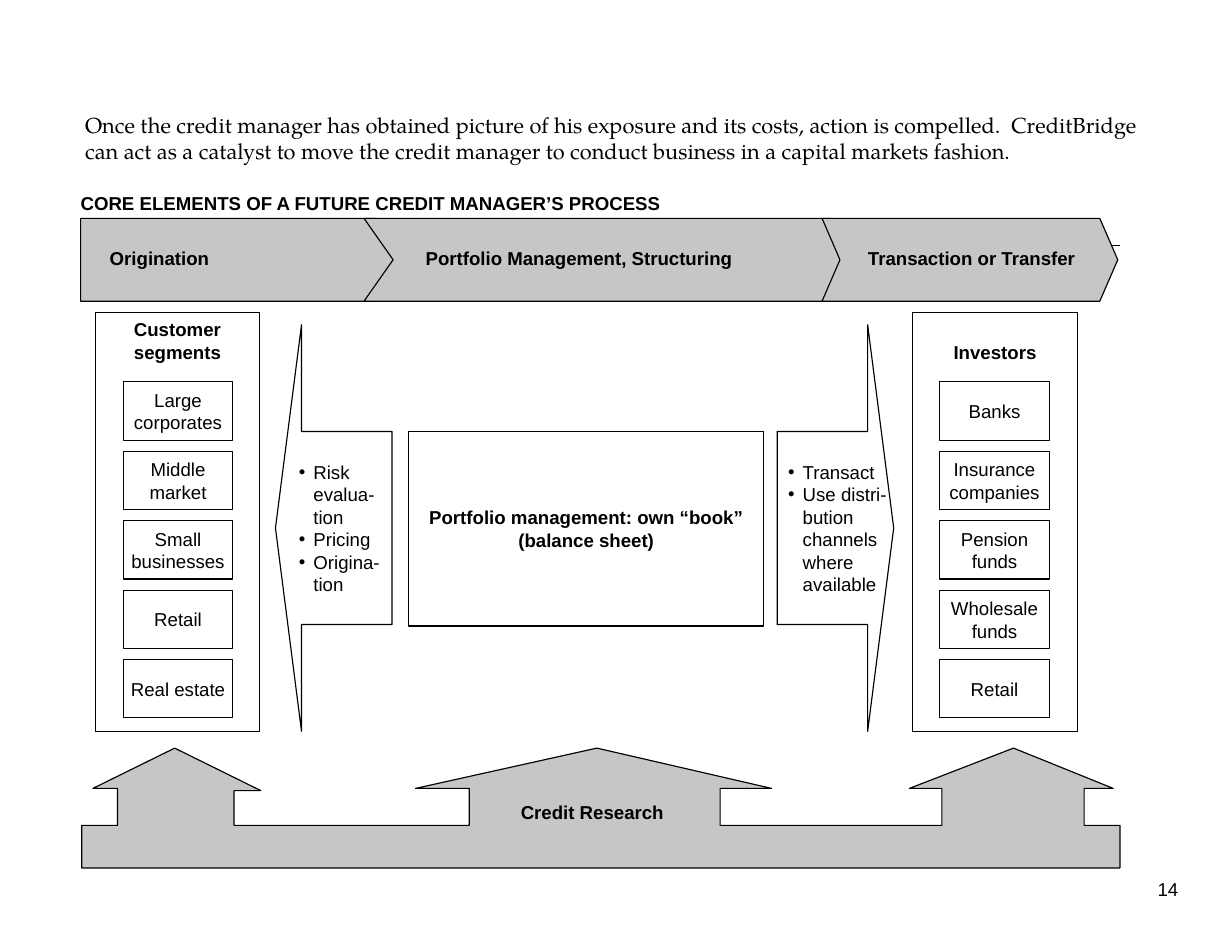
"""Build the slide on the core elements of a future credit manager's process."""
import copy
from lxml import etree
from pptx import Presentation
from pptx import util as u
from pptx.dml.color import RGBColor
from pptx.enum import shapes, text
from pptx.oxml.ns import qn

BLACK, WHITE, GREY = "000000", "FFFFFF", "C6C6C6"
CENTER, LEFT, RIGHT = text.PP_ALIGN.CENTER, text.PP_ALIGN.LEFT, text.PP_ALIGN.RIGHT
MIDDLE, TOP = text.MSO_ANCHOR.MIDDLE, text.MSO_ANCHOR.TOP
RECTANGLE = shapes.MSO_SHAPE.RECTANGLE
NO_INSETS, BOX_INSETS = (0, 0, 0, 0), (0.1, 0.05, 0.1, 0.05)


def color(value):
    return RGBColor.from_string(value)


class ProcessSlide:
    def __init__(self, slide, font="Arial", size=12, line_width=0.75):
        self.slide = slide
        self.font = font
        self.size = size
        self.line_width = line_width

    def paint(self, shape, fill, outlined=True):
        shape.shadow.inherit = False
        shape.fill.solid()
        shape.fill.fore_color.rgb = color(fill)
        if outlined:
            shape.line.color.rgb = color(BLACK)
            shape.line.width = u.Pt(self.line_width)
        else:
            shape.line.fill.background()

    def set_words(self, shape, words, bold=False, align=LEFT, anchor=TOP,
                  insets=NO_INSETS, wrap=True, font=None, size=None):
        frame = shape.text_frame
        frame.text = words
        frame.word_wrap = wrap
        frame.vertical_anchor = anchor
        (frame.margin_left, frame.margin_top,
         frame.margin_right, frame.margin_bottom) = map(u.Inches, insets)
        for paragraph in frame.paragraphs:
            paragraph.alignment = align
            for run in paragraph.runs:
                run.font.name = font or self.font
                run.font.size = u.Pt(size or self.size)
                run.font.bold = bold
                run.font.color.rgb = color(BLACK)
            for line_break in paragraph._p.findall(qn("a:br")):
                line_break.append(copy.deepcopy(paragraph.runs[0]._r.rPr))

    def label(self, place, words, **style):
        shape = self.slide.shapes.add_textbox(*map(u.Inches, place))
        self.set_words(shape, words, **style)

    def box(self, place, words, fill=WHITE, outlined=True, bold=False, align=CENTER,
            anchor=MIDDLE, insets=BOX_INSETS, wrap=False):
        shape = self.slide.shapes.add_shape(RECTANGLE, *map(u.Inches, place))
        self.paint(shape, fill, outlined)
        self.set_words(shape, words, bold, align, anchor, insets, wrap)

    def outline(self, points, fill=GREY):
        start, *others = [(u.Inches(x), u.Inches(y)) for x, y in points]
        builder = self.slide.shapes.build_freeform(*start)
        builder.add_line_segments(others, close=True)
        self.paint(builder.convert_to_shape(), fill)

    def rule(self, x1, y1, x2, y2):
        line = self.slide.shapes.add_connector(
            shapes.MSO_CONNECTOR.STRAIGHT, *map(u.Inches, (x1, y1, x2, y2)))
        line.line.color.rgb = color(BLACK)
        line.line.width = u.Pt(self.line_width)
        etree.SubElement(line._element.spPr, qn("a:effectLst"))

    def chevron(self, left, shoulder, tip, notch, label_place, words):
        top, middle, bottom = 1.95, 2.32, 2.69
        self.outline([(left, top), (shoulder, top), (tip, middle),
                      (shoulder, bottom), (left, bottom), (notch, middle)])
        label_left, label_width = label_place
        self.box((label_left, 1.99, label_width, 0.63), words, GREY, False, True,
                 LEFT, insets=(0.2, 0, 0, 0), wrap=True)

    def column(self, left, heading, heading_top, box_left, items):
        self.box((left, 2.79, 1.47, 3.74), heading, bold=True, anchor=TOP,
                 insets=(0.1, heading_top, 0.1, 0.05))
        for row, item in enumerate(items):
            self.box((box_left, 3.41 + 0.62 * row, 0.98, 0.52), item)

    def bullet_arrow(self, left, bullets, continued=(), flipped=False):
        shape = self.slide.shapes.add_shape(
            shapes.MSO_SHAPE.LEFT_ARROW, *map(u.Inches, (left, 2.9, 1.04, 3.63)))
        shape.adjustments[0], shape.adjustments[1] = 0.475, 0.224
        if flipped:
            shape._element.spPr.xfrm.set("flipH", "1")
        self.paint(shape, WHITE)
        self.set_words(shape, "\n".join([*bullets, *continued]), anchor=MIDDLE,
                       insets=BOX_INSETS, wrap=False)
        for index, paragraph in enumerate(shape.text_frame.paragraphs):
            properties = paragraph._p.get_or_add_pPr()
            bulleted = index < len(bullets)
            properties.set("marL", str(u.Inches(0.13)))
            properties.set("indent", str(u.Inches(-0.13 if bulleted else 0)))
            if bulleted:
                etree.SubElement(properties, qn("a:buFont")).set("typeface", self.font)
                etree.SubElement(properties, qn("a:buChar")).set("char", "•")


def main():
    presentation = Presentation()
    presentation.slide_width, presentation.slide_height = u.Inches(11), u.Inches(8.5)
    page = ProcessSlide(presentation.slides.add_slide(presentation.slide_layouts[6]))

    page.rule(2, 2.19, 10, 2.19)
    page.label((0.72, 1.71, 8, 0.2),
               "CORE ELEMENTS OF A FUTURE CREDIT MANAGER’S PROCESS", bold=True)
    page.chevron(0.72, 3.35, 3.51, 0.72, (0.78, 2.57), "Origination")
    page.chevron(3.25, 7.41, 7.67, 3.51, (3.6, 3.81), "Portfolio Management, Structuring")
    page.chevron(7.34, 9.82, 9.98, 7.5, (7.55, 2.27), "Transaction or Transfer")

    page.column(0.85, "Customer\nsegments", 0.05, 1.1,
                ["Large\ncorporates", "Middle\nmarket", "Small\nbusinesses",
                 "Retail", "Real estate"])
    page.bullet_arrow(2.46, ["Risk\vevalua-\vtion", "Pricing", "Origina-\vtion"])
    page.box((3.65, 3.85, 3.17, 1.74),
             "Portfolio management: own “book”\v(balance sheet)", bold=True)
    page.bullet_arrow(6.94, ["Transact", "Use distri-\vbution\vchannels"],
                      ["where", "available"], flipped=True)
    page.column(8.15, "Investors", 0.25, 8.39,
                ["Banks", "Insurance\ncompanies", "Pension\nfunds",
                 "Wholesale\nfunds", "Retail"])

    base, wing, peak = 7.37, 7.04, 6.68
    research = [(0.73, base)]
    for stem_left, wing_left, tip, wing_right, stem_right, right_wing in (
            (1.05, 0.83, 1.56, 2.33, 2.09, 7.06),
            (4.19, 3.71, 5.33, 6.89, 6.43, wing),
            (8.41, 8.12, 9.05, 9.94, 9.68, wing)):
        research += [(stem_left, base), (stem_left, wing), (wing_left, wing),
                     (tip, peak), (wing_right, right_wing),
                     (stem_right, right_wing), (stem_right, base)]
    page.outline(research + [(10, base), (10, 7.75), (0.73, 7.75)])
    page.label((4.65, 7.15, 1.28, 0.2), "Credit Research", bold=True, wrap=False)

    page.label((0.76, 1, 9.52, 0.47),
               "Once the credit manager has obtained picture of his exposure and its costs, "
               "action is compelled.  CreditBridge can act as a catalyst to move the credit "
               "manager to conduct business in a capital markets fashion.",
               font="TeX Gyre Pagella", size=14)
    page.label((8.23, 7.84, 2.29, 0.2), "14", align=RIGHT)
    presentation.save("out.pptx")


if __name__ == "__main__":
    main()
